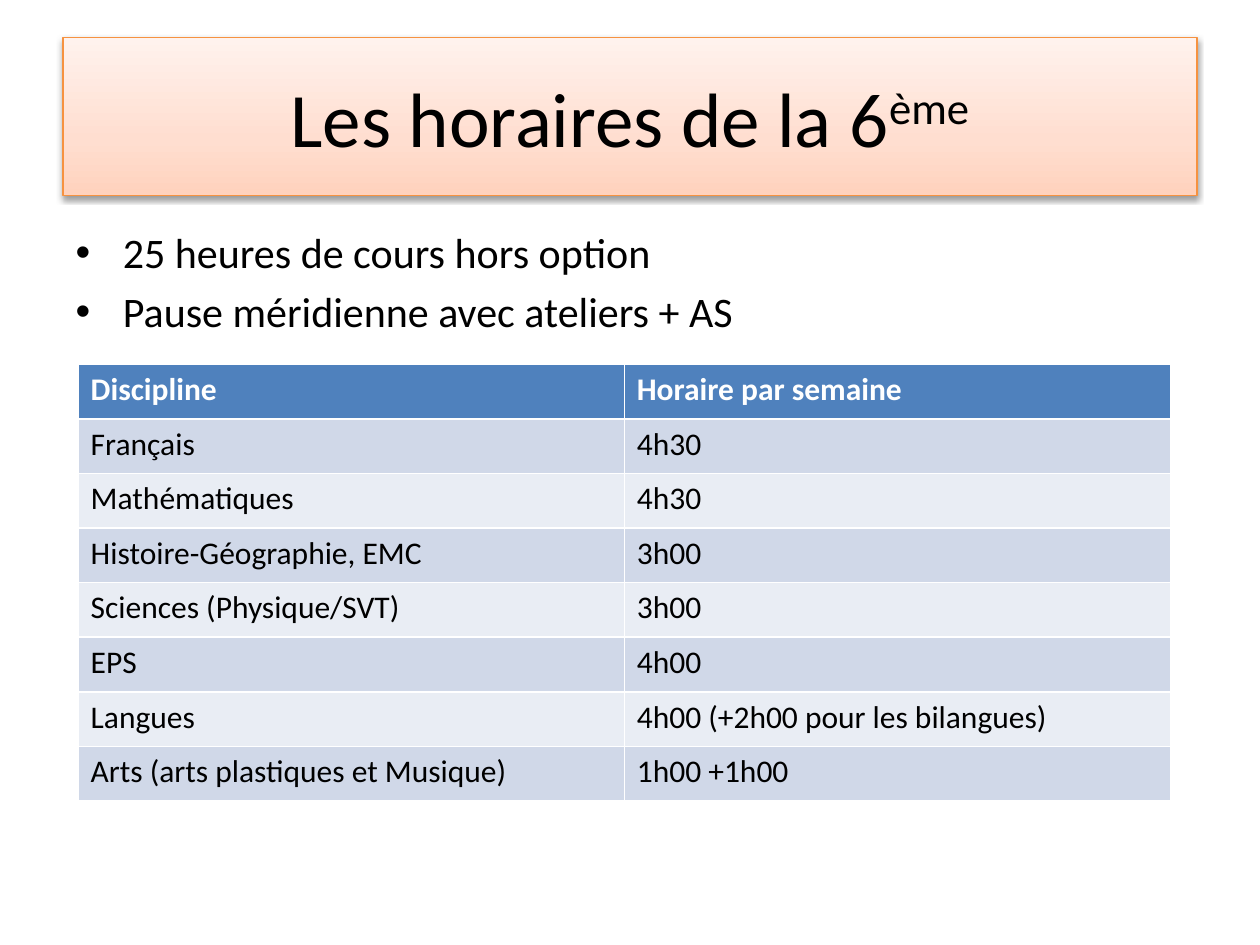
from lxml import etree
from pptx import Presentation
from pptx.dml.color import RGBColor
from pptx.enum.text import MSO_ANCHOR, PP_ALIGN
from pptx.oxml import parse_xml
from pptx.oxml.ns import nsdecls
from pptx.util import Inches, Pt

CENTER = PP_ALIGN.CENTER
MIDDLE = MSO_ANCHOR.MIDDLE

BLACK = RGBColor(0x00, 0x00, 0x00)
WHITE = RGBColor(0xFF, 0xFF, 0xFF)
ORANGE = RGBColor(0xF6, 0x92, 0x40)
HEADER_BLUE = RGBColor(0x4F, 0x81, 0xBD)
BANDS = (RGBColor(0xD0, 0xD8, 0xE8), RGBColor(0xE9, 0xED, 0xF4))
PEACH_STOPS = (
    (0, RGBColor(0xFF, 0xD2, 0xBD)),
    (35, RGBColor(0xFF, 0xDE, 0xD0)),
    (100, RGBColor(0xFF, 0xF2, 0xED)),
)

BULLETS = ("25 heures de cours hors option", "Pause méridienne avec ateliers + AS")
TIMETABLE = (
    ("Discipline", "Horaire par semaine"),
    ("Français", "4h30"),
    ("Mathématiques", "4h30"),
    ("Histoire-Géographie, EMC", "3h00"),
    ("Sciences (Physique/SVT)", "3h00"),
    ("EPS", "4h00"),
    ("Langues", "4h00 (+2h00 pour les bilangues)"),
    ("Arts (arts plastiques et Musique)", "1h00 +1h00"),
)


class SlideBuilder:
    font = "Calibri"

    def __init__(self, slide):
        self.s = slide

    def place(self, sp, left, top, width, height):
        box = {"left": left, "top": top, "width": width, "height": height}
        for name, value in box.items():
            setattr(sp, name, Inches(value))

    def run(self, p, text, size, color=BLACK, bold=False):
        r = p.add_run()
        r.text = text
        for name, value in {"name": self.font, "size": Pt(size), "bold": bold}.items():
            setattr(r.font, name, value)
        r.font.color.rgb = color
        return r

    def gradient(self, sp, stops):
        """Fill from the first stop at the bottom to the last at the top."""
        fill = parse_xml(
            f'<a:gradFill {nsdecls("a")} rotWithShape="1"><a:gsLst>'
            + "".join(
                f'<a:gs pos="{pos * 1000}"><a:srgbClr val="{color}"/></a:gs>'
                for pos, color in stops
            )
            + '</a:gsLst><a:lin ang="16200000" scaled="0"/></a:gradFill>'
        )
        sp.element.spPr.append(fill)

    def drop_shadow(self, sp, blur, distance, opacity):
        effects = parse_xml(f'<a:effectLst {nsdecls("a")}/>')
        shadow = etree.SubElement(
            effects, effects.tag.replace("effectLst", "outerShdw"),
            blurRad=str(Pt(blur)), dist=str(Pt(distance)), dir="5400000", rotWithShape="0",
        )
        color = etree.SubElement(
            shadow, effects.tag.replace("effectLst", "srgbClr"), val=str(BLACK))
        etree.SubElement(
            color, effects.tag.replace("effectLst", "alpha"), val=str(opacity * 1000))
        sp.element.spPr.append(effects)

    def title(self, text, superscript, *box):
        sp = self.s.shapes.title
        self.place(sp, *box)
        self.gradient(sp, PEACH_STOPS)
        sp.line.color.rgb = ORANGE
        sp.line.width = Pt(0.75)
        self.drop_shadow(sp, blur=3.1, distance=1.6, opacity=38)
        tf = sp.text_frame
        tf.vertical_anchor = MIDDLE
        p = tf.paragraphs[0]
        p.alignment = CENTER
        self.run(p, text, 44)
        r = self.run(p, superscript, 44)
        r.font._element.set("baseline", "30000")

    def bullets(self, items, *box):
        sp = self.s.placeholders[1]
        self.place(sp, *box)
        tf = sp.text_frame
        for i, item in enumerate(items):
            p = tf.add_paragraph() if i else tf.paragraphs[0]
            self.run(p, item, 24)

    def table(self, rows, left, top, width, height):
        frame = self.s.shapes.add_table(
            len(rows), len(rows[0]), *map(Inches, (left, top, width, height)))
        for i, row in enumerate(rows):
            header = i == 0
            for j, text in enumerate(row):
                cell = frame.table.cell(i, j)
                cell.fill.solid()
                cell.fill.fore_color.rgb = HEADER_BLUE if header else BANDS[(i - 1) % 2]
                self.run(cell.text_frame.paragraphs[0], text, 18,
                         WHITE if header else BLACK, header)


def main():
    prs = Presentation()
    prs.slide_width, prs.slide_height = Inches(10), Inches(7.5)
    builder = SlideBuilder(prs.slides.add_slide(prs.slide_layouts[1]))
    builder.title("Les horaires de la 6", "ème", 0.5, 0.3, 9, 1.25)
    builder.bullets(BULLETS, 0.5, 1.75, 9, 4.95)
    builder.table(TIMETABLE, 0.62, 2.89, 8.67, 3.47)
    prs.save("out.pptx")


if __name__ == "__main__":
    main()
